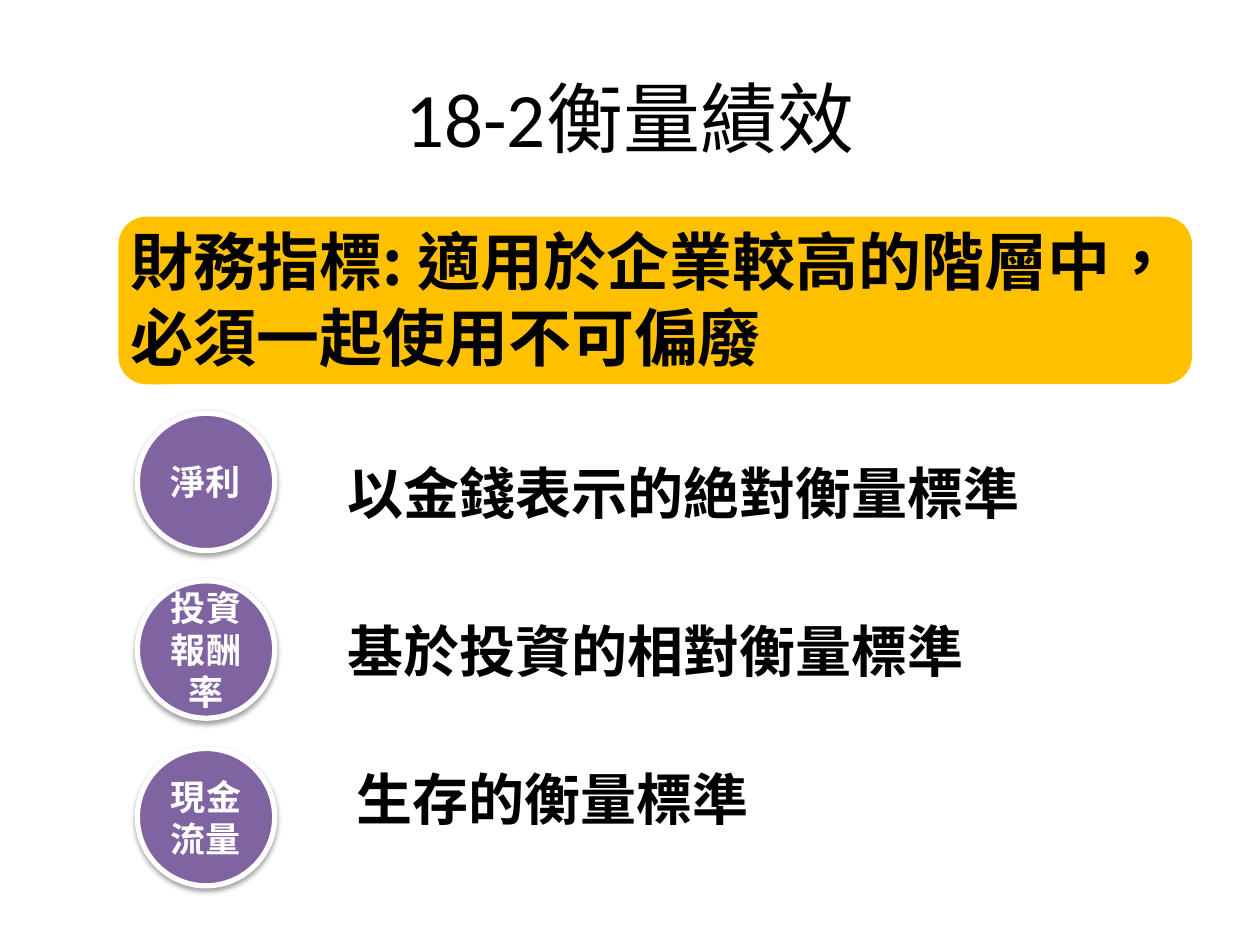
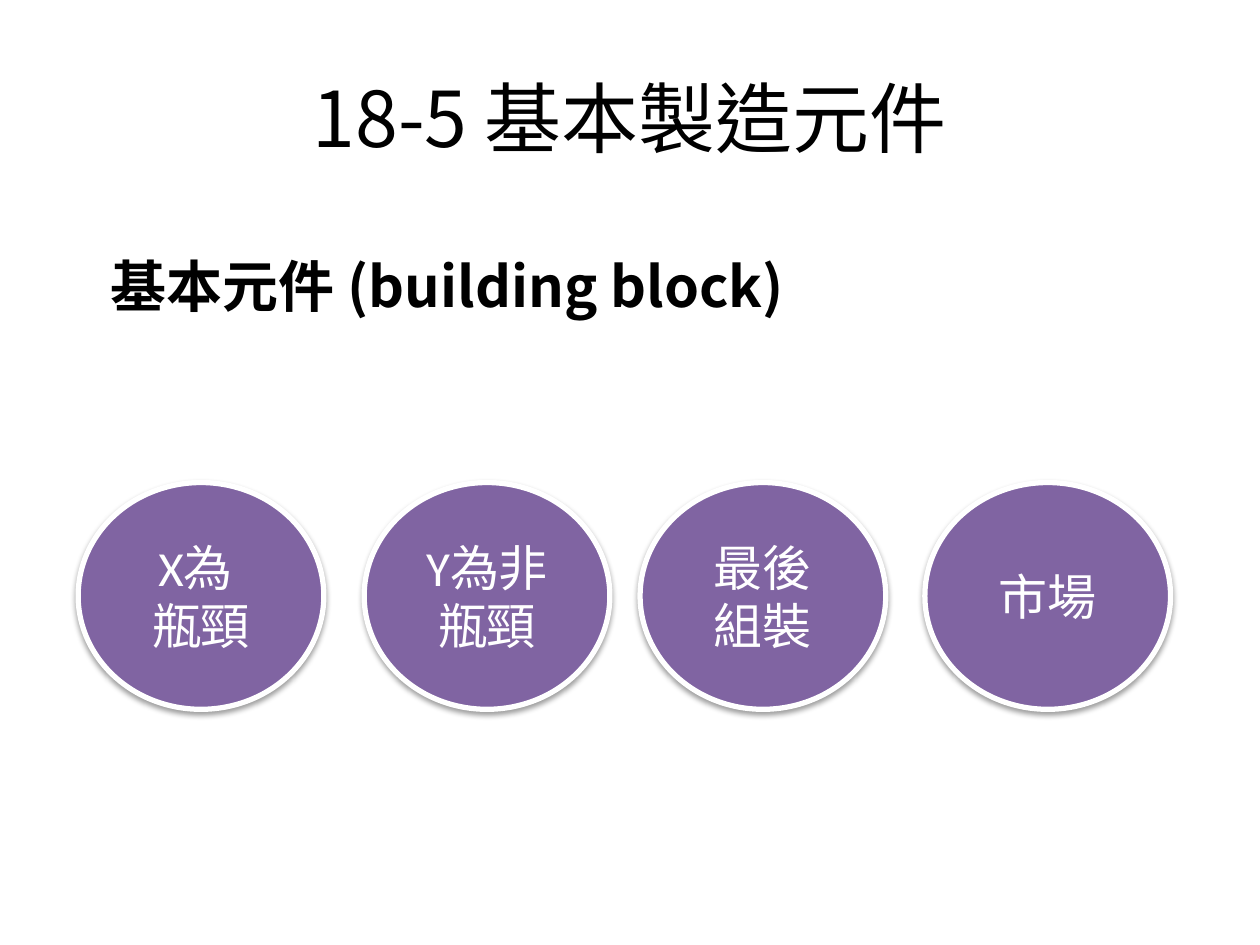
from lxml import etree
from pptx import Presentation
from pptx.dml.color import RGBColor
from pptx.enum.shapes import MSO_SHAPE
from pptx.enum.text import MSO_ANCHOR, PP_ALIGN
from pptx.oxml.ns import qn
from pptx.util import Emu, Pt

OVAL, ROUND_RECT = MSO_SHAPE.OVAL, MSO_SHAPE.ROUNDED_RECTANGLE
LEFT, CENTER = PP_ALIGN.LEFT, PP_ALIGN.CENTER
TOP, MIDDLE = MSO_ANCHOR.TOP, MSO_ANCHOR.MIDDLE
BLANK = 6
PX = 9144  # 100 px to the inch


def rgb(hex_color):
    return RGBColor.from_string(hex_color)


class Deck:
    """Holds the shared style and the current slide."""
    BLACK, WHITE, PURPLE, AMBER = "000000", "FFFFFF", "8064A2", "FFC000"
    LATIN, CJK_TITLE, CJK_BOLD = "Calibri", "Noto Sans CJK SC", "Noto Sans CJK JP"

    def __init__(self, width, height):
        self.prs = Presentation()
        self.prs.slide_width, self.prs.slide_height = Emu(width * PX), Emu(height * PX)
        self.s = None

    def new_slide(self, title, font):
        self.s = self.prs.slides.add_slide(self.prs.slide_layouts[BLANK])
        self.text(title, (50, 30, 900, 125), 44, font, align=CENTER, anchor=MIDDLE)

    def set_text(self, sp, text, size, font, color, bold, align, anchor):
        tf = sp.text_frame
        tf.word_wrap = True
        tf.vertical_anchor = anchor
        tf.text = text
        east_asian = self.CJK_TITLE if font == self.LATIN else font
        for p in tf.paragraphs:
            p.alignment = align
            p._p.get_or_add_pPr().set("hangingPunct", "1")
            for r in p.runs:
                r.font.size, r.font.bold, r.font.name = Pt(size), bold, font
                r.font.color.rgb = rgb(color)
                rPr = r._r.get_or_add_rPr()
                rPr.set("lang", "zh-TW")
                etree.SubElement(rPr, qn("a:ea"), typeface=east_asian)

    def text(self, text, box, size, font=CJK_BOLD, bold=False, align=LEFT, anchor=TOP):
        sp = self.s.shapes.add_textbox(*(Emu(v * PX) for v in box))
        self.set_text(sp, text, size, font, self.BLACK, bold, align, anchor)

    def shape(self, kind, box, fill):
        sp = self.s.shapes.add_shape(kind, *(Emu(v * PX) for v in box))
        sp.shadow.inherit = False
        sp.fill.solid()
        sp.fill.fore_color.rgb = rgb(fill)
        sp.line.fill.background()
        return sp

    def bubble(self, text, box, size, bold=False):
        sp = self.shape(OVAL, box, self.PURPLE)
        sp.line.color.rgb = rgb(self.WHITE)
        sp.line.width = Pt(3)
        # Soft shadow below the bubble
        effects = sp._element.spPr.find(qn("a:effectLst"))
        shadow = etree.SubElement(effects, qn("a:outerShdw"), blurRad="40000",
                                  dist="20000", dir="5400000", rotWithShape="0")
        color = etree.SubElement(shadow, qn("a:srgbClr"), val=self.BLACK)
        etree.SubElement(color, qn("a:alpha"), val="38000")
        self.set_text(sp, text, size, self.LATIN, self.WHITE, bold, CENTER, MIDDLE)


def measures_slide(deck):
    deck.new_slide("18-2衡量績效", deck.LATIN)

    # Banner
    deck.shape(ROUND_RECT, (94, 172, 852, 133), deck.AMBER)
    deck.text("財務指標: 適用於企業較高的階層中，必須一起使用不可偏廢",
              (94, 172, 828, 131), 36, bold=True)

    # Measures, each with its explanation
    measures = [
        ("淨利", "以金錢表示的絶對衡量標準", 266, 359),
        ("投資報酬率", "基於投資的相對衡量標準", 266, 484),
        ("現金流量", "生存的衡量標準", 273, 602),
    ]
    for i, (name, meaning, left, top) in enumerate(measures):
        deck.bubble(name, (109, 328 + i * 133, 109, 109), 20, bold=True)
        deck.text(meaning, (left, top, 617, 64), 32, bold=True)


def building_blocks_slide(deck):
    deck.new_slide("18-5 基本製造元件", deck.CJK_TITLE)
    deck.text("基本元件 (building block)", (78, 195, 727, 64), 32, bold=True)

    # Row of building blocks
    blocks = [("X為 \n瓶頸", 62), ("Y為非 瓶頸", 289), ("最後\n組裝", 508), ("市場", 734)]
    for name, left in blocks:
        deck.bubble(name, (left, 383, 195, 180), 28)


def main():
    deck = Deck(1000, 750)
    measures_slide(deck)
    building_blocks_slide(deck)
    deck.prs.save("out.pptx")


if __name__ == "__main__":
    main()
